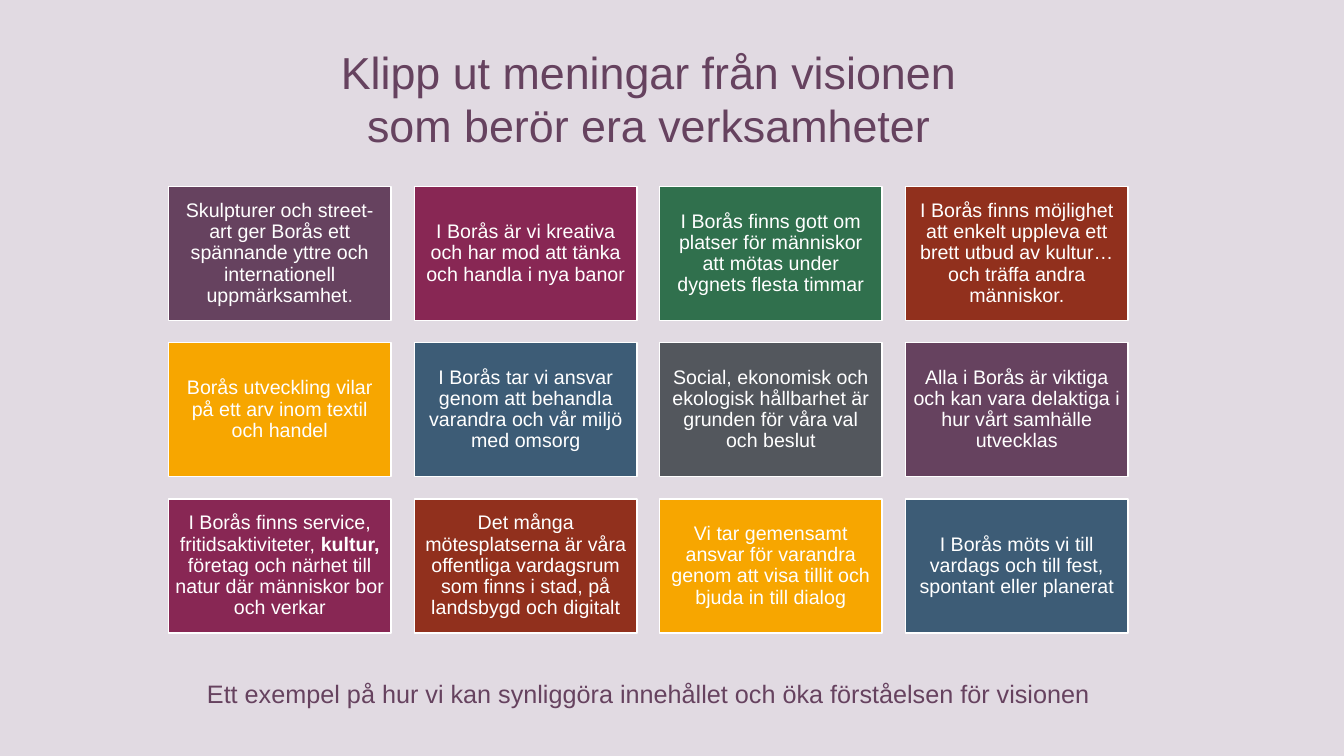
"""Build a slide with a grid of vision statements under a heading."""
from dataclasses import dataclass
from typing import Any, NamedTuple

from pptx import Presentation
from pptx.dml.color import RGBColor
from pptx.enum.shapes import MSO_SHAPE
from pptx.enum.text import MSO_ANCHOR, MSO_AUTO_SIZE, PP_ALIGN
from pptx.util import Emu, Pt

EMU_PER_PX = 9144


@dataclass(frozen=True)
class Theme:
    background: str = "E1DAE2"
    white: str = "FFFFFF"
    plum: str = "66425F"
    berry: str = "882754"
    green: str = "30704D"
    rust: str = "91301D"
    amber: str = "F7A600"
    blue: str = "3D5C76"
    grey: str = "53575D"
    font: str = "Arial"
    title_size: int = 32
    caption_size: int = 18
    card_size: int = 14


THEME = Theme()


class Box(NamedTuple):
    left: int
    top: int
    width: int
    height: int


class Piece(NamedTuple):
    text: str
    color: str = THEME.white
    bold: bool = False


@dataclass(frozen=True)
class Card:
    fill: str
    pieces: tuple[Piece, ...]


@dataclass(frozen=True)
class Label:
    box: Box
    size: int
    text: str


GRID = Box(167, 185, 952, 443)
COLUMNS, ROWS = 4, 3
CARD_WIDTH, CARD_HEIGHT = 221, 133

CARDS = (
    Card(THEME.plum, (
        Piece("Skulpturer och street-art ger Borås ett spännande yttre och internationell uppmärksamhet"),
        Piece(".", THEME.background))),
    Card(THEME.berry, (Piece("I Borås är vi kreativa och har mod att tänka och handla i nya banor"),)),
    Card(THEME.green, (
        Piece("I Borås finns gott om platser för människor att mötas under dygnets flesta timmar"),)),
    Card(THEME.rust, (
        Piece("I Borås finns möjlighet att enkelt uppleva ett brett utbud av kultur…och träffa andra människor."),)),
    Card(THEME.amber, (Piece("Borås utveckling vilar på ett arv inom textil och handel"),)),
    Card(THEME.blue, (Piece("I Borås tar vi ansvar genom att behandla varandra och vår miljö med omsorg"),)),
    Card(THEME.grey, (Piece("Social, ekonomisk och ekologisk hållbarhet är grunden för våra val och beslut"),)),
    Card(THEME.plum, (Piece("Alla i Borås är viktiga och kan vara delaktiga i hur vårt samhälle utvecklas"),)),
    Card(THEME.berry, (
        Piece("I Borås finns service, fritidsaktiviteter, "),
        Piece("kultur,", bold=True),
        Piece(" företag och närhet till natur där människor bor och verkar"))),
    Card(THEME.rust, (
        Piece("Det många mötesplatserna är våra offentliga vardagsrum som finns i stad, på landsbygd och digitalt"),)),
    Card(THEME.amber, (
        Piece("Vi tar gemensamt ansvar för varandra genom att visa tillit och bjuda in till dialog"),)),
    Card(THEME.blue, (Piece("I Borås möts vi till vardags och till fest, spontant eller planerat"),)),
)

LABELS = (
    Label(Box(310, 39, 667, 118), THEME.title_size,
          "Klipp ut meningar från visionen som berör era verksamheter"),
    Label(Box(167, 668, 952, 40), THEME.caption_size,
          "Ett exempel på hur vi kan synliggöra innehållet och öka förståelsen för visionen"),
)


def px(length: int) -> Emu:
    return Emu(length * EMU_PER_PX)


def place(box: Box) -> tuple[Emu, ...]:
    return tuple(px(length) for length in box)


def apply_format(target: Any, values: dict[str, Any]) -> None:
    for name, value in values.items():
        setattr(target, name, value)


def write(frame: Any, pieces: tuple[Piece, ...], size: int, frame_format: dict[str, Any],
          line_spacing: float = 1.0) -> None:
    apply_format(frame, {"word_wrap": True, **frame_format})
    paragraph = frame.paragraphs[0]
    apply_format(paragraph, {"alignment": PP_ALIGN.CENTER, "line_spacing": line_spacing})
    for piece in pieces:
        run = paragraph.add_run()
        run.text = piece.text
        apply_format(run.font, {"name": THEME.font, "size": Pt(size), "bold": piece.bold})
        run.font.color.rgb = RGBColor.from_string(piece.color)


def card_box(index: int) -> Box:
    row, column = divmod(index, COLUMNS)
    left = GRID.left + round(column * (GRID.width - CARD_WIDTH) / (COLUMNS - 1))
    top = GRID.top + round(row * (GRID.height - CARD_HEIGHT) / (ROWS - 1))
    return Box(left, top, CARD_WIDTH, CARD_HEIGHT)


def draw_card(slide: Any, card: Card, box: Box) -> None:
    shape = slide.shapes.add_shape(MSO_SHAPE.RECTANGLE, *place(box))
    shape.shadow.inherit = False
    shape.fill.solid()
    shape.fill.fore_color.rgb = RGBColor.from_string(card.fill)
    shape.line.color.rgb = RGBColor.from_string(THEME.white)
    shape.line.width = Pt(1)
    margins = {f"margin_{side}": px(6) for side in ("left", "top", "right", "bottom")}
    write(shape.text_frame, card.pieces, THEME.card_size,
          {"vertical_anchor": MSO_ANCHOR.MIDDLE, **margins}, line_spacing=0.9)


def draw_label(slide: Any, label: Label) -> None:
    shape = slide.shapes.add_textbox(*place(label.box))
    write(shape.text_frame, (Piece(label.text, THEME.plum),), label.size,
          {"auto_size": MSO_AUTO_SIZE.SHAPE_TO_FIT_TEXT})


def main() -> None:
    presentation = Presentation()
    apply_format(presentation, {"slide_width": px(1333), "slide_height": px(750)})
    slide = presentation.slides.add_slide(presentation.slide_layouts[6])
    slide.background.fill.solid()
    slide.background.fill.fore_color.rgb = RGBColor.from_string(THEME.background)
    for index, card in enumerate(CARDS):
        draw_card(slide, card, card_box(index))
    for label in LABELS:
        draw_label(slide, label)
    presentation.save("out.pptx")


if __name__ == "__main__":
    main()
